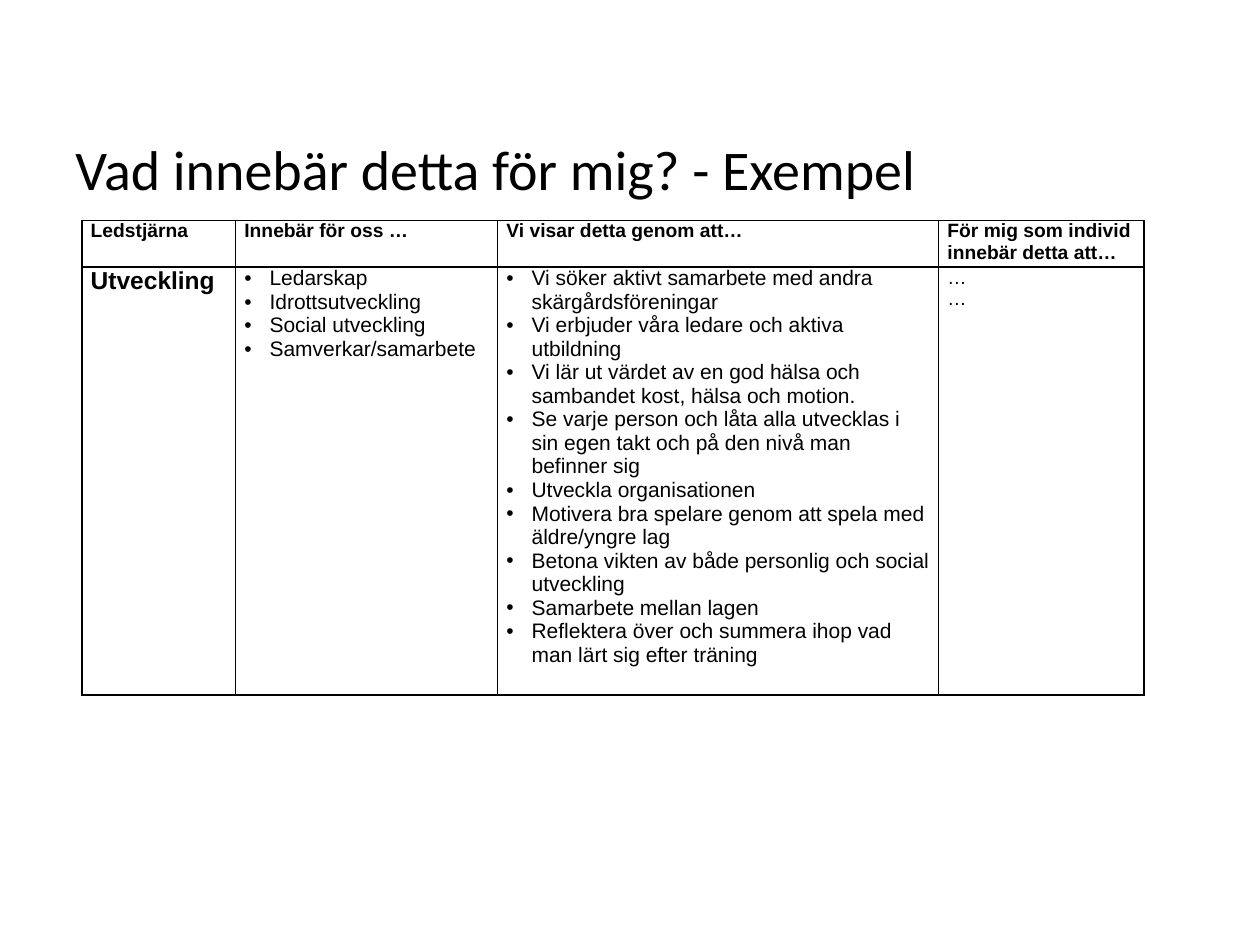
from lxml.etree import SubElement
from pptx import Presentation
from pptx.dml.color import RGBColor
from pptx.enum.text import MSO_ANCHOR
from pptx.oxml.ns import qn
from pptx.util import Inches, Pt

COLORS = {"text": "000000", "border": "000000"}
COLUMN_WIDTHS = [1.22, 2.08, 3.5, 1.63]
ROW_HEIGHTS = [0.35, 3.17]
HEADERS = [
    "Ledstjärna",
    "Innebär för oss …",
    "Vi visar detta genom att…",
    "För mig som individ innebär detta att…",
]
MEANINGS = ["Ledarskap", "Idrottsutveckling", "Social utveckling", "Samverkar/samarbete"]
ACTIONS = [
    "Vi söker aktivt samarbete med andra skärgårdsföreningar",
    "Vi erbjuder våra ledare och aktiva utbildning",
    "Vi lär ut värdet av en god hälsa och sambandet kost, hälsa och motion.",
    "Se varje person och låta alla utvecklas i sin egen takt och på den nivå man befinner sig",
    "Utveckla organisationen",
    "Motivera bra spelare genom att spela med äldre/yngre lag",
    "Betona vikten av både personlig och social utveckling",
    "Samarbete mellan lagen",
    "Reflektera över och summera ihop vad man lärt sig efter träning",
]
ROWS = [
    [([header], 11, True, False) for header in HEADERS],
    [
        (["Utveckling"], 14, True, False),
        (MEANINGS, 12, False, True),
        (ACTIONS, 12, False, True),
        (["…", "…"], 11, False, False),
    ],
]


def style_font(font, name, size, bold):
    font.name = name
    font.size = Pt(size)
    font.bold = bold
    font.color.rgb = RGBColor.from_string(COLORS["text"])


def fill_cell(cell, lines, size, bold, bulleted):
    cell.margin_left = cell.margin_right = Inches(0.07)
    cell.margin_top = cell.margin_bottom = 0
    cell.text_frame.text = "\n".join(lines)
    for para in cell.text_frame.paragraphs:
        if bulleted:
            properties = para._p.get_or_add_pPr()
            properties.set("marL", str(Inches(0.2)))
            properties.set("indent", str(-Inches(0.2)))
            SubElement(properties, qn("a:buFont"), typeface="Arial")
            SubElement(properties, qn("a:buChar"), char="•")
        style_font(para.font, "Arial", size, bold)
    cell_properties = cell._tc.get_or_add_tcPr()
    for side in ("lnL", "lnR", "lnT", "lnB"):
        line = SubElement(cell_properties, qn(f"a:{side}"), w=str(Pt(1)))
        solid = SubElement(line, qn("a:solidFill"))
        SubElement(solid, qn("a:srgbClr"), val=COLORS["border"])
    cell.fill.background()


deck = Presentation()
deck.slide_width = Inches(10)
deck.slide_height = Inches(7.5)
page = deck.slides.add_slide(deck.slide_layouts[6])

title_box = page.shapes.add_textbox(Inches(0.5), Inches(0.92), Inches(9), Inches(0.83))
title_box.text_frame.word_wrap = True
title_box.text_frame.vertical_anchor = MSO_ANCHOR.MIDDLE
title = title_box.text_frame.paragraphs[0]
title.text = "Vad innebär detta för mig? - Exempel"
style_font(title.font, "Calibri", 32, False)

table = page.shapes.add_table(
    len(ROWS), len(HEADERS), Inches(0.65), Inches(1.75),
    Inches(sum(COLUMN_WIDTHS)), Inches(sum(ROW_HEIGHTS)),
).table
table.horz_banding = False
for column, width in zip(table.columns, COLUMN_WIDTHS):
    column.width = Inches(width)
for row, height, contents in zip(table.rows, ROW_HEIGHTS, ROWS):
    row.height = Inches(height)
    for cell, content in zip(row.cells, contents):
        fill_cell(cell, *content)

deck.save("out.pptx")
